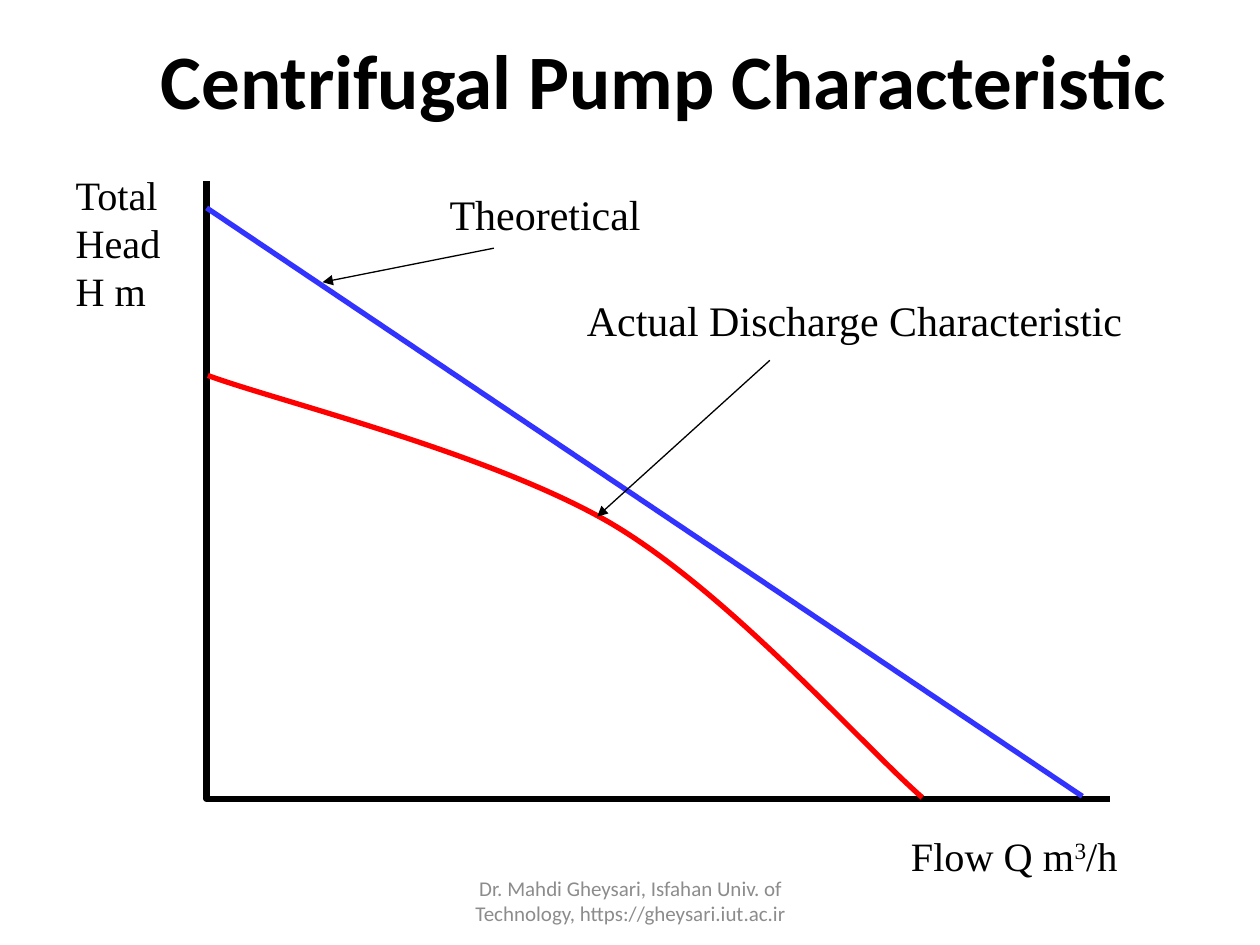
import lxml.etree
import pptx
import pptx.dml.color
import pptx.enum.shapes
import pptx.enum.text
import pptx.oxml.ns
import pptx.util

RGB = pptx.dml.color.RGBColor
BLACK = RGB(0x00, 0x00, 0x00)
BLUE = RGB(0x33, 0x33, 0xFF)
RED = RGB(0xFF, 0x00, 0x00)
GREY = RGB(0x8C, 0x8C, 0x8C)

SERIF = "Times New Roman"
SANS = "Calibri"
ALIGN = pptx.enum.text.PP_ALIGN
ANCHOR = pptx.enum.text.MSO_ANCHOR

WIDTH, HEIGHT = pptx.util.Inches(10), pptx.util.Inches(7.5)
COLS, ROWS = 100, 75
ZERO = (16.4, 63.4)  # where the two axes meet


def grid(col, row):
    """Turn grid columns and rows into slide lengths."""
    return round(col * WIDTH / COLS), round(row * HEIGHT / ROWS)


def place(shape, box):
    shape.left, shape.top = grid(*box[:2])
    shape.width, shape.height = grid(*box[2:])


def write(shape, *lines, size=24, font=SERIF, color=BLACK, bold=False,
          align=ALIGN.LEFT, anchor=ANCHOR.TOP, wrap=True, inset=None):
    """Fill a shape with paragraphs; text between ^ marks is raised."""
    frame = shape.text_frame
    frame.word_wrap = wrap
    frame.vertical_anchor = anchor
    if inset is not None:
        frame.margin_left = frame.margin_right = inset
        frame.margin_top = frame.margin_bottom = inset
    for i, line in enumerate(lines):
        para = frame.add_paragraph() if i else frame.paragraphs[0]
        para.alignment = align
        for j, part in enumerate(line.split("^")):
            run = para.add_run()
            run.text = part
            run.font.size = pptx.util.Pt(size)
            run.font.name = font
            run.font.bold = bold
            run.font.color.rgb = color
            if j % 2:
                run.font._element.set("baseline", "30000")


def label(slide, box, *lines, **style):
    shape = slide.shapes.add_textbox(0, 0, 0, 0)
    place(shape, box)
    write(shape, *lines, **style)


def child(parent, tag, **attrs):
    name = pptx.oxml.ns.qn(tag)
    return lxml.etree.SubElement(parent, name, **attrs)


def stroke(shape, color, width):
    shape.line.color.rgb = color
    shape.line.width = pptx.util.Pt(width)


def link(slide, start, end, color=BLACK, width=0.75, arrow=False):
    kind = pptx.enum.shapes.MSO_CONNECTOR.STRAIGHT
    line = slide.shapes.add_connector(kind, *grid(*start), *grid(*end))
    stroke(line, color, width)
    if arrow:
        child(line.line._get_or_add_ln(), "a:tailEnd", type="triangle")
    child(line._element.spPr, "a:effectLst")


def outline(slide, points, color, width):
    """Draw an open, unfilled path through the points."""
    start, *rest = [grid(*point) for point in points]
    pen = slide.shapes.build_freeform(*start, scale=1.0)
    pen.add_line_segments(rest, close=False)
    shape = pen.convert_to_shape()
    shape.fill.background()
    shape.shadow.inherit = False
    stroke(shape, color, width)
    return shape


def bend(shape):
    """Turn each three line segments into one cubic curve."""
    steps = list(shape._element.iter(pptx.oxml.ns.qn("a:lnTo")))
    for i in range(0, len(steps), 3):
        curve = child(steps[i].getparent(), "a:cubicBezTo")
        for step in steps[i:i + 3]:
            curve.append(step[0])
            step.getparent().remove(step)


def main():
    deck = pptx.Presentation()
    deck.slide_width, deck.slide_height = WIDTH, HEIGHT
    slide = deck.slides.add_slide(deck.slide_layouts[5])

    title = slide.shapes.title
    place(title, (10.2, 0, 85, 12.5))
    write(title, "Centrifugal Pump Characteristic", size=44, font=SANS,
          bold=True, align=ALIGN.CENTER, anchor=ANCHOR.MIDDLE)

    left, base = ZERO
    outline(slide, [(left, 14.4), ZERO, (88.1, base)], BLACK, 3.63)
    label(slide, (72.3, 66, 16.5, 3.8), "Flow Q m^3^/h",
          size=23, wrap=False, inset=0)
    label(slide, (6, 13.5, 7.3, 11.5), "Total Head", "H m",
          size=23, inset=0)

    link(slide, (left, 16.5), (85.9, 63.2), BLUE, 3)
    actual = [(16.5, 29.8), (21.9, 31.8), (39.1, 36), (48.6, 41.6),
              (58, 47.2), (68.1, 58.8), (73.2, 63.3)]
    bend(outline(slide, actual, RED, 3))

    link(slide, (39.2, 19.7), (25.6, 22.4), arrow=True)
    label(slide, (34.7, 14.5, 18, 5), "Theoretical", wrap=False)
    link(slide, (61.1, 28.6), (47.4, 41), arrow=True)
    label(slide, (45.6, 22.9, 45.4, 5), "Actual Discharge Characteristic",
          wrap=False)

    label(slide, (34.2, 69.5, 31.7, 4),
          "Dr. Mahdi Gheysari, Isfahan Univ. of Technology, "
          "https://gheysari.iut.ac.ir",
          size=12, font=SANS, color=GREY, align=ALIGN.CENTER,
          anchor=ANCHOR.MIDDLE)

    deck.save("out.pptx")


if __name__ == "__main__":
    main()
